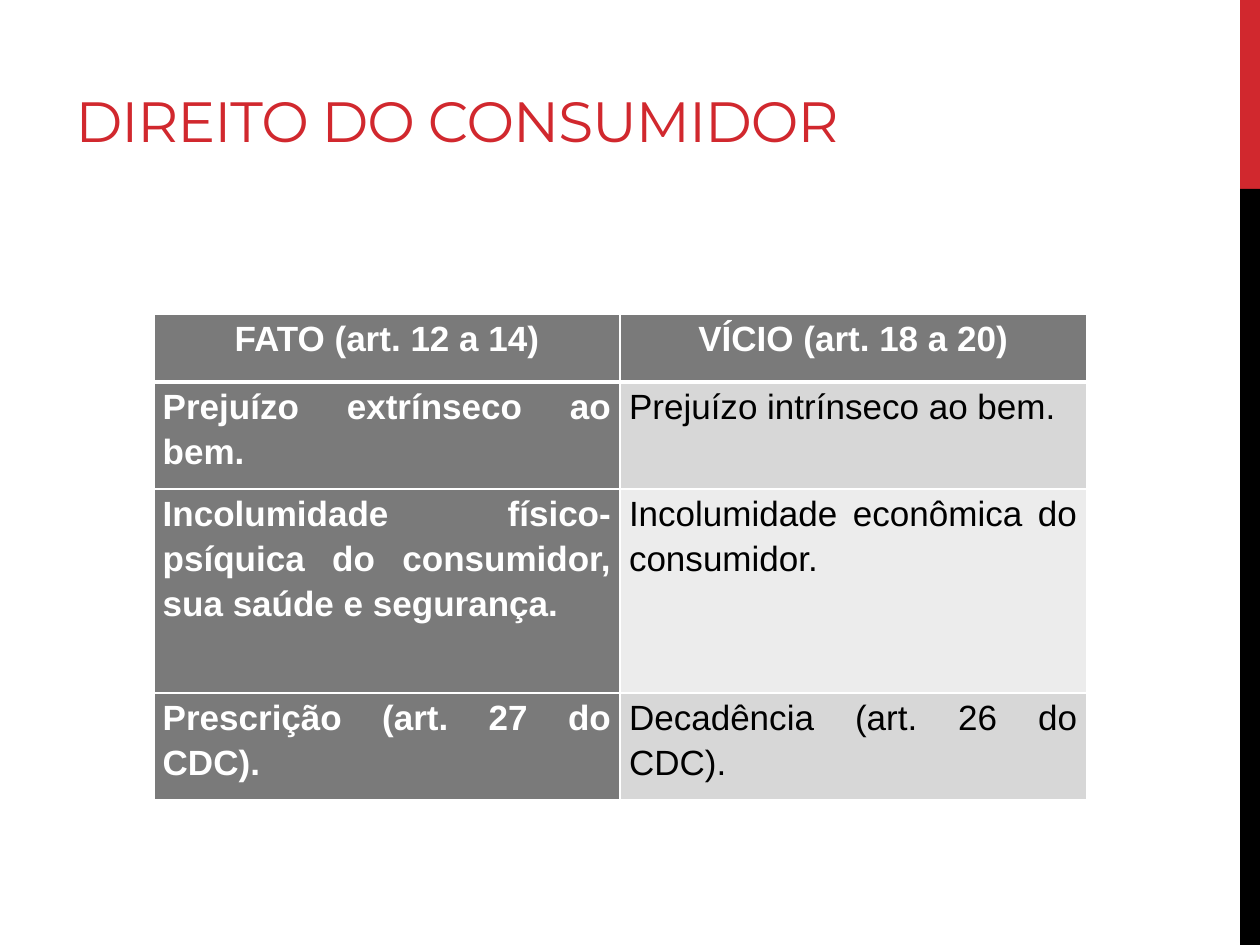
from lxml.etree import SubElement
from pptx import Presentation
from pptx.dml.color import RGBColor
from pptx.enum.shapes import MSO_SHAPE
from pptx.enum.text import MSO_ANCHOR, MSO_AUTO_SIZE, PP_ALIGN
from pptx.oxml.ns import qn
from pptx.util import Cm, Pt

RED = RGBColor(0xD1, 0x28, 0x2E)
BLACK = RGBColor(0x00, 0x00, 0x00)
WHITE = RGBColor(0xFF, 0xFF, 0xFF)
GRAY = RGBColor(0x7A, 0x7A, 0x7A)
BAND_DARK = RGBColor(0xD7, 0xD7, 0xD7)
BAND_LIGHT = RGBColor(0xEC, 0xEC, 0xEC)

ROWS = [
    ("FATO (art. 12 a 14)", "VÍCIO (art. 18 a 20)"),
    ("Prejuízo extrínseco ao bem.", "Prejuízo intrínseco ao bem."),
    ("Incolumidade físico-psíquica do consumidor, sua saúde e segurança.",
     "Incolumidade econômica do consumidor."),
    ("Prescrição (art. 27 do CDC).", "Decadência (art. 26 do CDC)."),
]
ROW_HEIGHTS = [Cm(1.37), Cm(2.16), Cm(4.11), Cm(2.16)]
COL_WIDTH = Cm(9.4)


def add_run(p, text, font, size, color, bold=False):
    """Append a formatted run to a paragraph."""
    r = p.add_run()
    r.text = text
    r.font.name = font
    r.font.size = Pt(size)
    r.font.bold = bold
    r.font.color.rgb = color
    return r


def add_bar(s, top, height, color):
    """Add one block of the stripe along the right edge."""
    sp = s.shapes.add_shape(MSO_SHAPE.RECTANGLE, Cm(25), top, Cm(0.4), height)
    sp.shadow.inherit = False
    sp.fill.solid()
    sp.fill.fore_color.rgb = color
    sp.line.fill.background()


def set_title(s, text):
    """Place and format the title placeholder."""
    sp = s.shapes.title
    sp.left, sp.top, sp.width, sp.height = Cm(1.27), Cm(1.52), Cm(22.43), Cm(1.7)
    tf = sp.text_frame
    tf.word_wrap = True
    tf.auto_size = MSO_AUTO_SIZE.NONE
    tf.vertical_anchor = MSO_ANCHOR.BOTTOM
    p = tf.paragraphs[0]
    p.alignment = PP_ALIGN.LEFT
    r = add_run(p, text, "Montserrat", 32.4, RED)
    r.font._element.set("spc", "-60")


def set_borders(cell, bottom):
    """Draw white borders, with the bottom one of the given width."""
    tcPr = cell._tc.get_or_add_tcPr()
    for side, width in (("L", 1), ("R", 1), ("T", 1), ("B", bottom)):
        ln = SubElement(tcPr, qn(f"a:ln{side}"), w=str(Pt(width)))
        fill = SubElement(ln, qn("a:solidFill"))
        SubElement(fill, qn("a:srgbClr"), val=str(WHITE))


def fill_cell(cell, text, row, col):
    """Write and style a cell according to its place in the table."""
    header = row == 0
    strong = header or col == 0
    set_borders(cell, 3 if header else 1)
    cell.fill.solid()
    band = BAND_DARK if row % 2 else BAND_LIGHT
    cell.fill.fore_color.rgb = GRAY if strong else band
    cell.margin_left = cell.margin_right = Cm(0.18)
    cell.margin_top = cell.margin_bottom = 0
    p = cell.text_frame.paragraphs[0]
    p.alignment = PP_ALIGN.CENTER if header else PP_ALIGN.JUSTIFY
    p.line_spacing = 1.15
    add_run(p, text, "Arial", 20, WHITE if strong else BLACK, strong)


def add_comparison(s):
    """Add the table that compares fato and vício."""
    cols = len(ROWS[0])
    table = s.shapes.add_table(len(ROWS), cols, Cm(3.1), Cm(6.33),
                               COL_WIDTH * cols, sum(ROW_HEIGHTS)).table
    table.first_col = True
    for column in table.columns:
        column.width = COL_WIDTH
    for i, (texts, height) in enumerate(zip(ROWS, ROW_HEIGHTS)):
        table.rows[i].height = height
        for j, text in enumerate(texts):
            fill_cell(table.cell(i, j), text, i, j)


def main():
    """Build the slide and save it."""
    prs = Presentation()
    prs.slide_width, prs.slide_height = Cm(25.4), Cm(19.05)
    s = prs.slides.add_slide(prs.slide_layouts[5])
    add_bar(s, 0, Cm(3.81), RED)
    add_bar(s, Cm(3.81), Cm(15.24), BLACK)
    set_title(s, "DIREITO DO CONSUMIDOR")
    add_comparison(s)
    prs.save("out.pptx")


if __name__ == "__main__":
    main()
